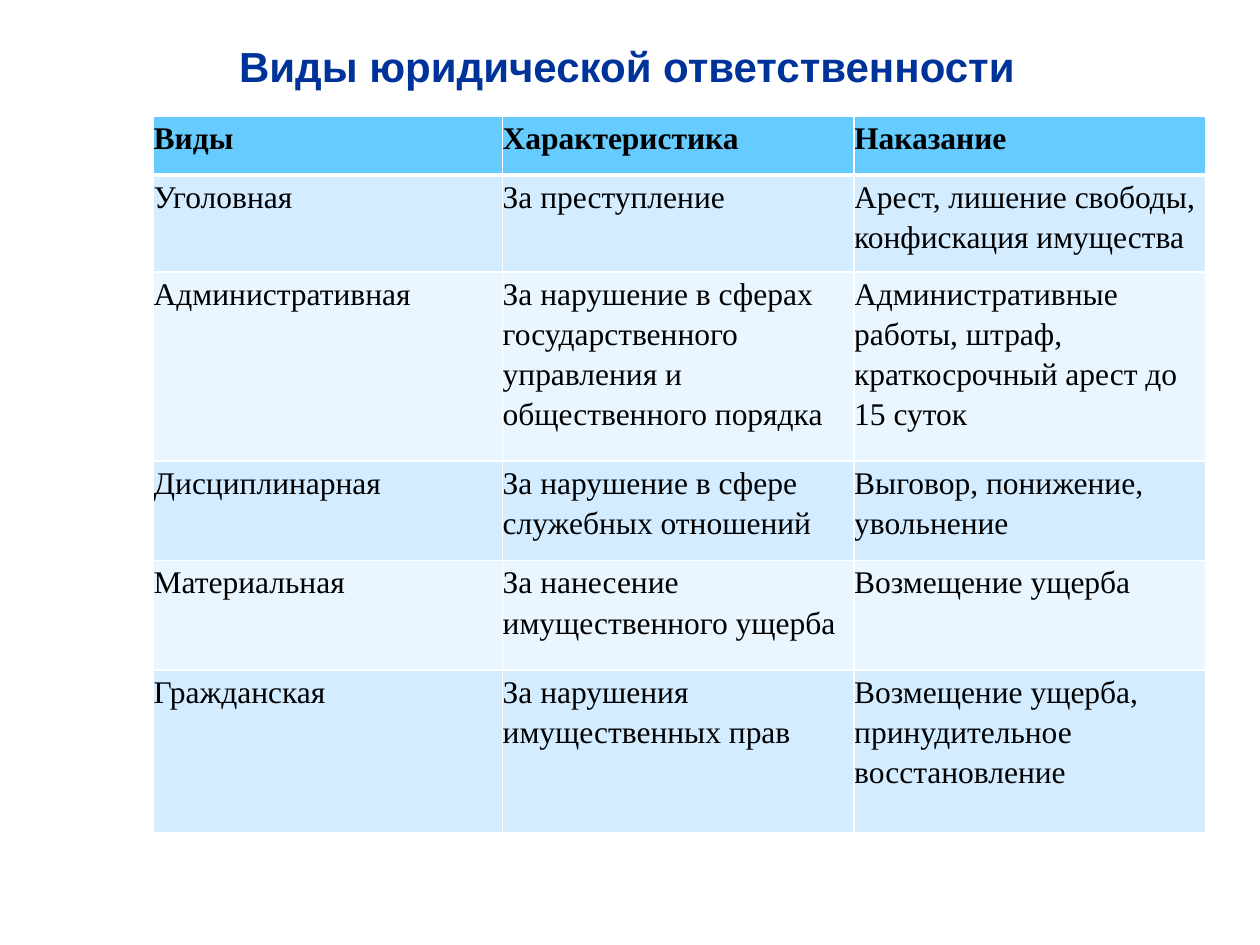
"""Build a slide with a table of the kinds of legal liability."""
from lxml import etree
from pptx import Presentation
from pptx import util as u
from pptx.dml.color import RGBColor
from pptx.enum import text
from pptx.oxml import ns


def paint(target, color):
    if hasattr(target, "solid"):
        target.solid()
        target = target.fore_color
    target.rgb = RGBColor.from_string(color)


def add_border(cell, side, points):
    line = etree.SubElement(cell._tc.get_or_add_tcPr(), ns.qn(f"a:ln{side}"), w=str(u.Pt(points)))
    solid = etree.SubElement(line, ns.qn("a:solidFill"))
    etree.SubElement(solid, ns.qn("a:srgbClr"), val="FFFFFF")


deck = Presentation()
deck.slide_width, deck.slide_height = u.Inches(10), u.Inches(7.5)
slide = deck.slides.add_slide(deck.slide_layouts[6])
paint(slide.background.fill, "FFFFFF")

heading = slide.shapes.add_textbox(
    u.Inches(1.3), u.Inches(0.21), u.Inches(7.17), u.Inches(0.63)).text_frame
heading.word_wrap = True
heading.vertical_anchor = text.MSO_ANCHOR.MIDDLE
heading.margin_left = u.Inches(0.28)
heading.text = "Виды юридической ответственности"
heading.paragraphs[0].alignment = text.PP_ALIGN.CENTER
heading_font = heading.paragraphs[0].runs[0].font
heading_font.name, heading_font.size, heading_font.bold = "Arial", u.Pt(24), True
paint(heading_font.color, "003399")

liabilities = [
    ("Виды", "Характеристика", "Наказание"),
    ("Уголовная", "За преступление", "Арест, лишение свободы, конфискация имущества"),
    ("Административная",
     "За нарушение в сферах государственного управления и общественного порядка",
     "Административные работы, штраф, краткосрочный арест до 15 суток"),
    ("Дисциплинарная", "За нарушение в сфере служебных отношений",
     "Выговор, понижение, увольнение"),
    ("Материальная", "За нанесение имущественного ущерба", "Возмещение ущерба"),
    ("Гражданская", "За нарушения имущественных прав",
     "Возмещение ущерба, принудительное восстановление"),
]
widths = [2.77, 2.79, 2.79]
heights = [0.47, 0.77, 1.5, 0.79, 0.87, 1.29]
table = slide.shapes.add_table(
    len(heights), len(widths), u.Inches(1.22), u.Inches(0.92),
    u.Inches(sum(widths)), u.Inches(sum(heights))).table
for column, width in zip(table.columns, widths):
    column.width = u.Inches(width)

for row, (entries, height) in enumerate(zip(liabilities, heights)):
    table.rows[row].height = u.Inches(height)
    is_header = row == 0
    band = "66CCFF" if is_header else ("EAF6FF", "D3ECFF")[row % 2]
    for column, entry in enumerate(entries):
        cell = table.cell(row, column)
        cell.margin_left = cell.margin_right = cell.margin_top = cell.margin_bottom = 0
        for side in "LRTB":
            is_header_rule = (row, side) in [(0, "B"), (1, "T")]
            add_border(cell, side, 3 if is_header_rule else 1)
        paint(cell.fill, band)
        cell.text_frame.text = entry
        paragraph = cell.text_frame.paragraphs[0]
        paragraph.line_spacing = 1.15
        paragraph.space_after = u.Pt(6.2)
        font = paragraph.runs[0].font
        font.name, font.size, font.bold = "Times New Roman", u.Pt(18), is_header
        paint(font.color, "000000")

deck.save("out.pptx")
